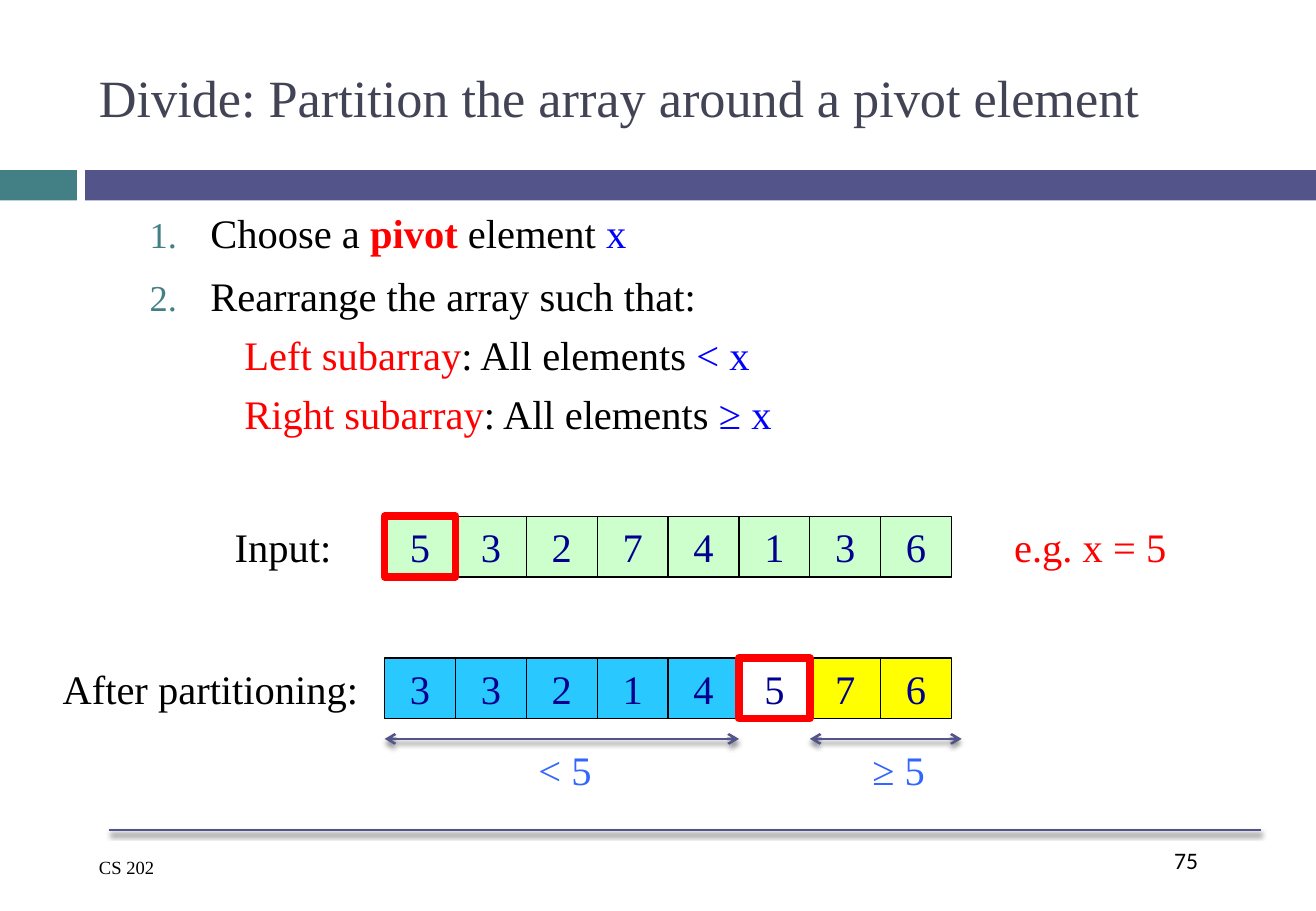
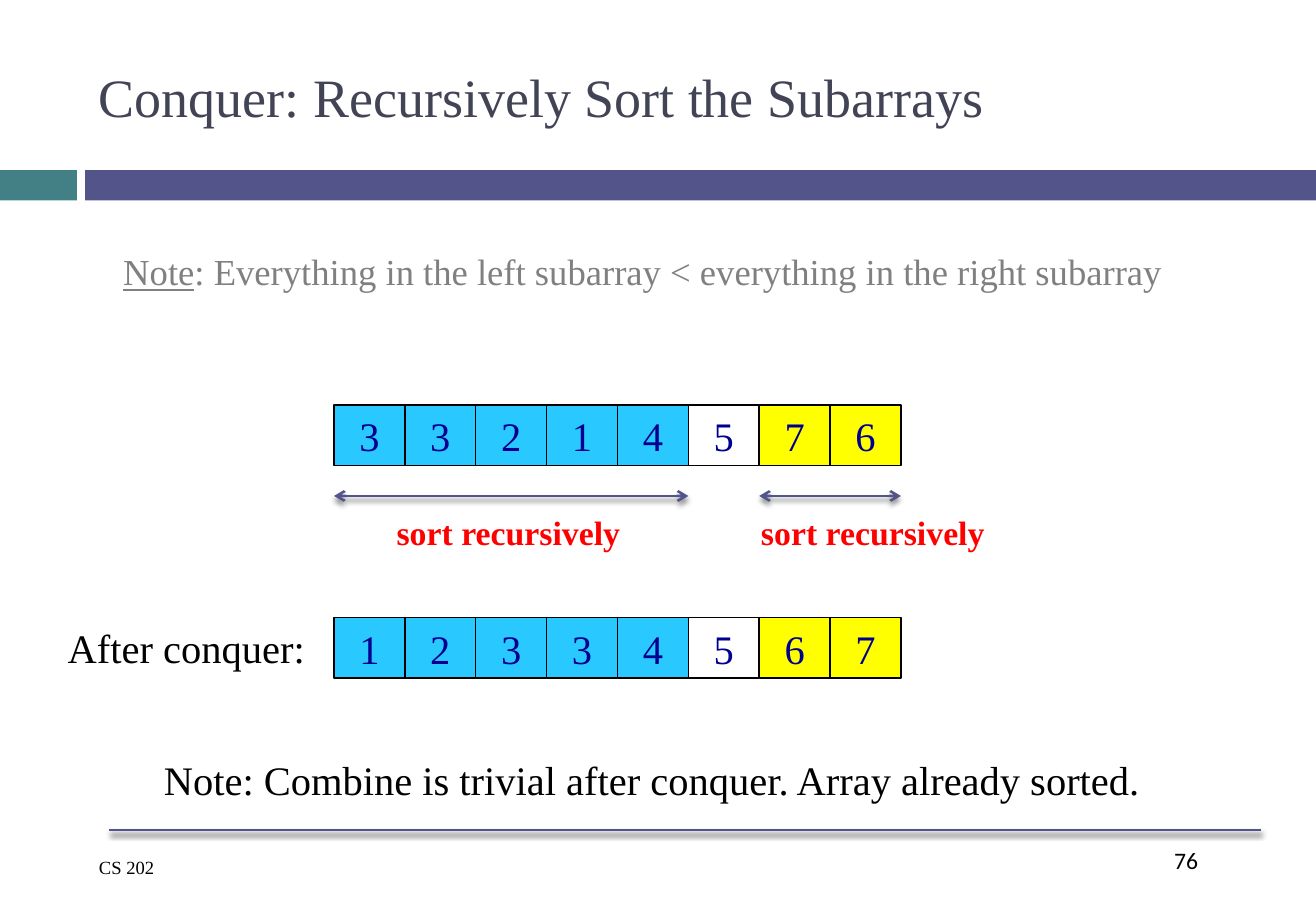
"""Builds two slides on the divide and conquer steps of quicksort."""
from lxml.etree import SubElement as Sub
from pptx import Presentation
from pptx.dml.color import RGBColor as RGB
from pptx.enum.shapes import MSO_CONNECTOR as Conn, MSO_SHAPE as Kind
from pptx.enum.text import MSO_ANCHOR as Anchor, PP_ALIGN as Align
from pptx.oxml.ns import qn
from pptx.util import Inches, Pt


class Theme:
    black, white, grey = "000000", "FFFFFF", "808080"
    teal, purple, title = "438086", "53548A", "424456"
    red, blue, sky, navy = "FF0000", "0000FF", "3366FF", "000090"
    green, low, high = "CCFFCC", "29C9FF", "FFFF00"
    serif, sans = "Times New Roman", "Calibri"
    text, note, label, page, foot = 24, 21.7, 20, 14, 11
    thin, rule, thick = 0.79, 1.5, 4.5


COLS, ROWS = 130, 90
UNIT = Inches(1) / 12
CELL, TALL = 7, 6
PARTS = [Theme.low] * 5 + [Theme.white] + [Theme.high] * 2


def box(slide, area, *paras, size=Theme.text, font=Theme.serif, fill=None,
        edge=None, width=Theme.thin, align=Align.LEFT, anchor=Anchor.TOP):
    """Adds a text box, or a rectangle if it has a fill or an edge."""
    place = [round(n * UNIT) for n in area]
    if fill or edge:
        shape = slide.shapes.add_shape(Kind.RECTANGLE, *place)
        shape.shadow.inherit = False
        if fill:
            shape.fill.solid()
            shape.fill.fore_color.rgb = RGB.from_string(fill)
        else:
            shape.fill.background()
        if edge:
            shape.line.color.rgb = RGB.from_string(edge)
            shape.line.width = Pt(width)
        else:
            shape.line.fill.background()
    else:
        shape = slide.shapes.add_textbox(*place)
    frame = shape.text_frame
    frame.word_wrap = True
    frame.vertical_anchor = anchor
    for i, runs in enumerate(paras):
        para = frame.add_paragraph() if i else frame.paragraphs[0]
        para.alignment = align
        for text, color, *style in runs:
            run = para.add_run()
            run.text = text
            run.font.name, run.font.size = font, Pt(size)
            run.font.color.rgb = RGB.from_string(color)
            run.font.bold = "bold" in style
            run.font.underline = "under" in style
    return shape


def rule(slide, left, right, top, tips=()):
    """Adds a level line with a soft shadow and open tips."""
    ends = [round(n * UNIT) for n in (left, top, right, top)]
    line = slide.shapes.add_connector(Conn.STRAIGHT, *ends)
    line.line.color.rgb = RGB.from_string(Theme.purple)
    line.line.width = Pt(Theme.rule)
    props = line.line._get_or_add_ln()
    for tip in tips:
        Sub(props, qn(f"a:{tip}"), type="arrow")
    glow = Sub(Sub(props.getparent(), qn("a:effectLst")), qn("a:outerShdw"),
               blurRad=str(Pt(3)), dist=str(Pt(2.4)), dir="5400000", rotWithShape="0")
    Sub(Sub(glow, qn("a:srgbClr"), val=Theme.black), qn("a:alpha"), val="45000")


deck = Presentation()
deck.slide_width, deck.slide_height = round(COLS * UNIT), round(ROWS * UNIT)

slides = []
for page, size, title in (
        ("75", 31, "Divide: Partition the array around a pivot element"),
        ("76", 32, "Conquer: Recursively Sort the Subarrays")):
    slide = deck.slides.add_slide(deck.slide_layouts[6])
    box(slide, (0, 16.8, 7.6, 3), fill=Theme.teal)
    box(slide, (8.4, 16.8, COLS - 8.4, 3), fill=Theme.purple)
    box(slide, (114.8, 83, 9.7, 6), [(page, Theme.black)], size=Theme.page, font=Theme.sans)
    rule(slide, 10.8, 124.6, 82)
    box(slide, (8.6, 84, 24, 3.5), [("CS 202", Theme.black)], size=Theme.foot)
    box(slide, (8.6, 3, 116, 13), [(title, Theme.title)], size=size, anchor=Anchor.MIDDLE)
    slides.append(slide)
split, sort = slides

steps = box(
    split, (13, 20, 105, 28),
    [("Choose a ", Theme.black), ("pivot", Theme.red, "bold"),
     (" element ", Theme.black), ("x", Theme.blue)],
    [("Rearrange the array such that:", Theme.black)],
    [("Left subarray", Theme.red), (": All elements ", Theme.black), ("< x", Theme.blue)],
    [("Right subarray", Theme.red), (": All elements ", Theme.black), ("≥ x", Theme.blue)])
for i, para in enumerate(steps.text_frame.paragraphs):
    main = i < 2
    para.space_before = Pt(8.5 if main else 6)
    props = para._p.get_or_add_pPr()
    props.set("marL", str(Inches(0.55 if main else 0.83)))
    props.set("indent", str(Inches(-0.5 if main else 0)))
    if main:
        Sub(Sub(props, qn("a:buClr")), qn("a:srgbClr"), val=Theme.teal)
        Sub(props, qn("a:buSzPct"), val="90000")
        Sub(props, qn("a:buFont"), typeface=Theme.serif)
        Sub(props, qn("a:buAutoNum"), type="arabicPeriod")

box(sort, (11, 24, 107, 8),
    [("Note", Theme.grey, "under"),
     (": Everything in the left subarray < everything in the right subarray", Theme.grey)],
    size=Theme.note)

for slide, left, top, digits, fills, pivot in (
        (split, 38, 51, "53274136", [Theme.green] * 8, 0),
        (split, 38, 65, "33214576", PARTS, 5),
        (sort, 33, 40, "33214576", PARTS, None),
        (sort, 33, 61, "12334567", PARTS, None)):
    for i, (digit, fill) in enumerate(zip(digits, fills)):
        box(slide, (left + i * CELL, top, CELL, TALL), [(digit, Theme.navy)], fill=fill,
            edge=Theme.black, align=Align.CENTER, anchor=Anchor.MIDDLE)
    if pivot is not None:
        box(slide, (left + pivot * CELL, top, CELL, TALL), edge=Theme.red, width=Theme.thick)

for slide, left, right, top in (
        (split, 38, 73, 73), (split, 80, 95, 73),
        (sort, 33, 68, 49), (sort, 75, 89, 49)):
    rule(slide, left, right, top, ("headEnd", "tailEnd"))

for slide, left, top, width, text, color in (
        (split, 22, 51, 12.2, "Input:", Theme.black),
        (split, 99, 51, 17.7, "e.g. x = 5", Theme.red),
        (split, 5, 65, 32, "After partitioning:", Theme.black),
        (split, 52, 73, 7.7, "< 5", Theme.sky),
        (split, 85, 73, 7.7, "≥ 5", Theme.sky),
        (sort, 5.5, 61, 26.3, "After conquer:", Theme.black),
        (sort, 15, 74, 100, "Note: Combine is trivial after conquer. Array already sorted.",
         Theme.black)):
    box(slide, (left, top, width, TALL), [(text, color)])

for left in (38, 74):
    box(sort, (left, 50, 24.7, 5.3), [("sort recursively", Theme.red, "bold")],
        size=Theme.label)

deck.save("out.pptx")
